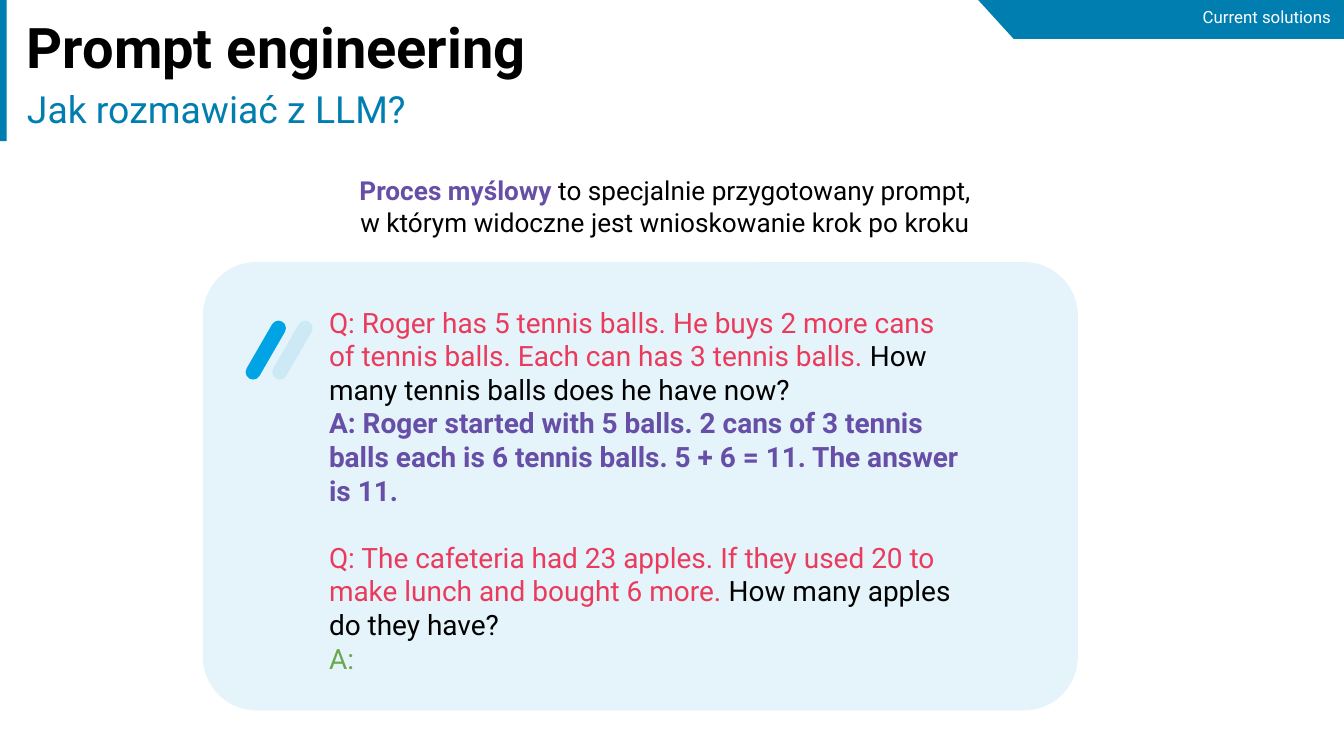
from pptx import Presentation
from pptx.dml.color import RGBColor
from pptx.enum.shapes import MSO_SHAPE
from pptx.enum.text import MSO_ANCHOR, MSO_AUTO_SIZE, PP_ALIGN
from pptx.util import Pt

BLUE = RGBColor(0x00, 0x7E, 0xB0)
SKY = RGBColor(0x00, 0xA4, 0xE4)
MIST = RGBColor(0xCC, 0xE9, 0xF5)
PALE = RGBColor(0xE5, 0xF4, 0xFA)
BLACK = RGBColor(0x00, 0x00, 0x00)
WHITE = RGBColor(0xFF, 0xFF, 0xFF)
PURPLE = RGBColor(0x67, 0x4E, 0xA7)
RED = RGBColor(0xEB, 0x3B, 0x5D)
GREEN = RGBColor(0x6A, 0xA8, 0x4F)

WIDE, HIGH = 720, 405
GAP = 18  # one empty line between the two questions

# Run styles
PLAIN = {"color": BLACK}
FACT = {"color": RED}
THINK = {"color": PURPLE, "bold": True}
REPLY = {"color": GREEN}

INTRO = [
    [("Proces myślowy ", THINK), ("to specjalnie przygotowany prompt,", PLAIN)],
    [("w którym widoczne jest wnioskowanie krok po kroku", PLAIN)],
]
SOLVED = [
    [("Q: Roger has 5 tennis balls. He buys 2 more cans", FACT)],
    [("of tennis balls. Each can has 3 tennis balls. ", FACT), ("How", PLAIN)],
    [("many tennis balls does he have now?", PLAIN)],
    [("A: Roger started with 5 balls. 2 cans of 3 tennis", THINK)],
    [("balls each is 6 tennis balls. 5 + 6 = 11. The answer", THINK)],
    [("is 11.", THINK)],
]
ASKED = [
    [("Q: The cafeteria had 23 apples. If they used 20 to", FACT)],
    [("make lunch and bought 6 more. ", FACT), ("How many apples", PLAIN)],
    [("do they have?", PLAIN)],
    [("A:", REPLY)],
]


def draw(slide, kind, box, fill, turn=0, adj=None):
    """Add a filled shape without outline."""
    shape = slide.shapes.add_shape(kind, *map(Pt, box))
    shape.shadow.inherit = False
    shape.fill.solid()
    shape.fill.fore_color.rgb = fill
    shape.line.fill.background()
    shape.rotation = turn
    if adj is not None:
        shape.adjustments[0] = adj
    return shape


def write(shape, box, lines, size, align=PP_ALIGN.LEFT, pad=3.6, gaps=()):
    """Place a text shape; gaps lists the lines that follow an empty space."""
    for name, value in zip(("left", "top", "width", "height"), box):
        setattr(shape, name, Pt(value))
    frame = shape.text_frame
    look = {
        "word_wrap": True,
        "auto_size": MSO_AUTO_SIZE.NONE,
        "vertical_anchor": MSO_ANCHOR.TOP,
        "margin_left": Pt(7.2),
        "margin_right": Pt(7.2),
        "margin_top": Pt(pad),
        "margin_bottom": Pt(pad),
    }
    for name, value in look.items():
        setattr(frame, name, value)
    for row, line in enumerate(lines):
        para = frame.add_paragraph() if row else frame.paragraphs[0]
        para.alignment = align
        para.space_before = Pt(GAP if row in gaps else 0)
        for text, style in line:
            run = para.add_run()
            run.text = text
            font = {"name": "Roboto", "size": Pt(size), "bold": style.get("bold", False)}
            for name, value in font.items():
                setattr(run.font, name, value)
            run.font.color.rgb = style["color"]


def add_text(slide, box, *args, **more):
    write(slide.shapes.add_textbox(*map(Pt, box)), box, *args, **more)


def add_head(slide, box):
    left, top, wide, high = box
    draw(slide, MSO_SHAPE.RECTANGLE, (left, top - 0.7, 3.6, high), BLUE)
    write(slide.shapes.title, (left + 7.2, top + 2.9, wide, 38.9),
          [[("Prompt engineering", {"color": BLACK, "bold": True})]], 30)
    write(slide.placeholders[1], (left + 7.2, top + 42.5, wide, 26.6),
          [[("Jak rozmawiać z LLM?", {"color": BLUE})]], 20)


def add_tag(slide, box):
    left, top, wide, high = box
    end = 22.3
    draw(slide, MSO_SHAPE.TRAPEZOID, (left, top - 0.7, wide - 0.7, high), BLUE, 180, 0.91)
    draw(slide, MSO_SHAPE.RECTANGLE, (left + wide - end, top - 0.7, end, high), BLUE)
    add_text(slide, (left + wide - 180, top, 180, high),
             [[("Current solutions", {"color": WHITE})]], 9, PP_ALIGN.RIGHT)


def add_card(slide, box):
    left, top, wide, high = box
    draw(slide, MSO_SHAPE.ROUNDED_RECTANGLE, box, PALE, adj=0.12)
    add_text(slide, (left + 60.5, top + 15.9, 384.5, high - 26),
             SOLVED + ASKED, 15, pad=7.2, gaps=(len(SOLVED),))
    for col, fill in enumerate((SKY, MIST)):
        bar = (left + 29.7 + 14.3 * col, top + 29.6, 8, 35.2)
        draw(slide, MSO_SHAPE.ROUNDED_RECTANGLE, bar, fill, 30, 0.5)


def main():
    deck = Presentation()
    deck.slide_width, deck.slide_height = Pt(WIDE), Pt(HIGH)
    slide = deck.slides.add_slide(deck.slide_layouts[0])
    add_head(slide, (0, 0, 500, 76.3))
    add_tag(slide, (523.4, 0, WIDE - 523.4, 21.6))
    add_text(slide, (23, 86.4, 666.7, 48.2), INTRO, 14, PP_ALIGN.CENTER, 7.2)
    add_card(slide, (108.7, 140.4, 468.7, 240.2))
    deck.save("out.pptx")


if __name__ == "__main__":
    main()
